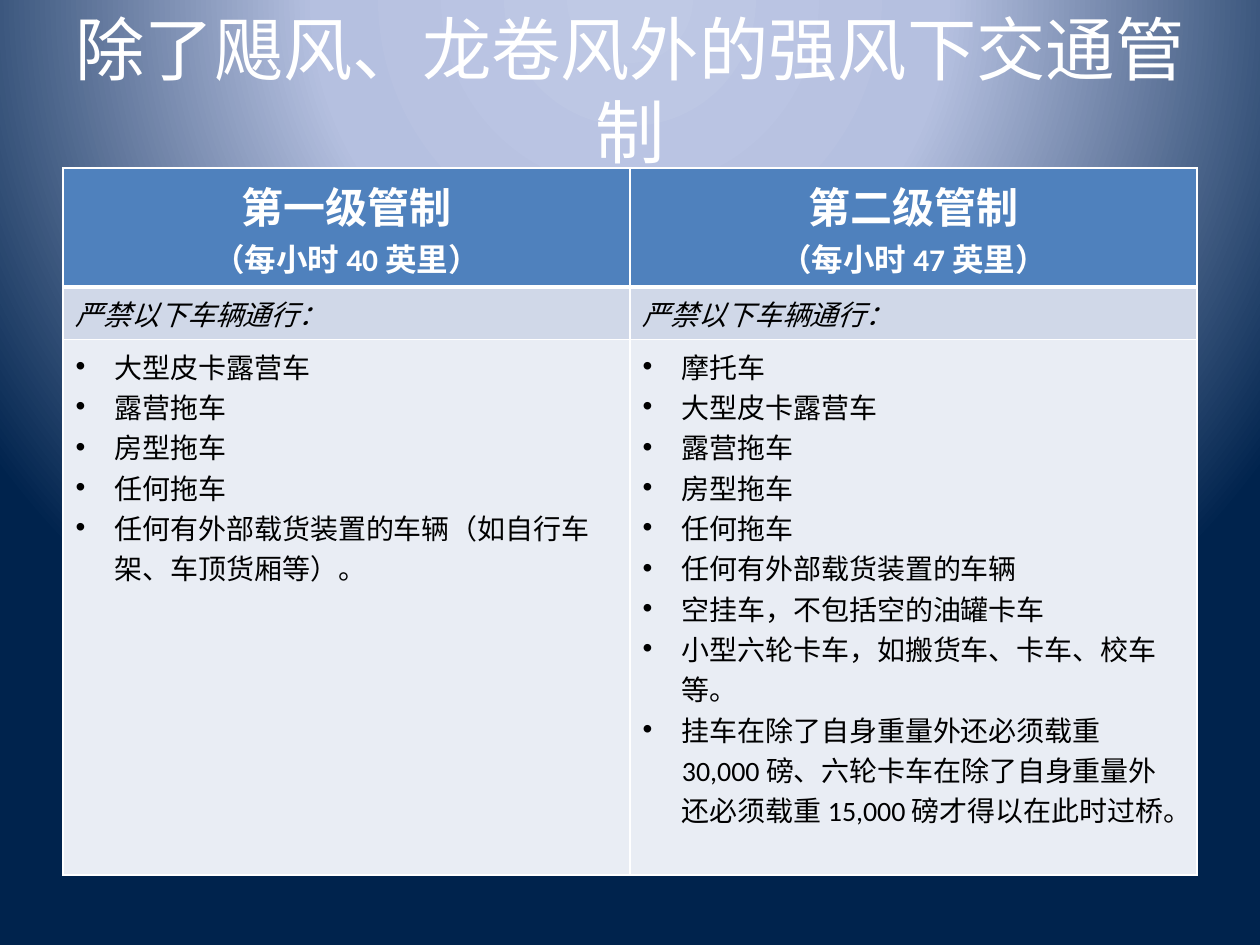
import pptx
import pptx.util
import pptx.dml.color
import pptx.enum.text
import pptx.oxml
import pptx.oxml.ns

Pt = pptx.util.Pt
ALIGN = pptx.enum.text.PP_ALIGN
NS = pptx.oxml.ns.nsdecls("a")
WHITE, BLACK = "FFFFFF", "000000"

TITLE = "除了飓风、龙卷风外的强风下交通管制"
HEADERS = [
    ("第一级管制", "（每小时 40 英里）"),
    ("第二级管制", "（每小时 47 英里）"),
]
BAN = "严禁以下车辆通行："
VEHICLES = [
    ["大型皮卡露营车", "露营拖车", "房型拖车", "任何拖车",
     "任何有外部载货装置的车辆（如自行车架、车顶货厢等）。"],
    ["摩托车", "大型皮卡露营车", "露营拖车", "房型拖车", "任何拖车",
     "任何有外部载货装置的车辆", "空挂车，不包括空的油罐卡车",
     "小型六轮卡车，如搬货车、卡车、校车等。",
     "挂车在除了自身重量外还必须载重 30,000 磅、"
     "六轮卡车在除了自身重量外还必须载重 15,000 磅才得以在此时过桥。"],
]


def rgb(color):
    return pptx.dml.color.RGBColor.from_string(color)


def set_background(s, stops):
    s.background.fill.solid()
    bg = s.background._cSld.bg.bgPr
    old = bg[0]
    gs = "".join(f'<a:gs pos="{pos * 1000}"><a:srgbClr val="{color}"/></a:gs>'
                 for pos, color in stops)
    bg.replace(old, pptx.oxml.parse_xml(
        f'<a:gradFill {NS} rotWithShape="1"><a:gsLst>{gs}</a:gsLst>'
        '<a:path path="circle"><a:fillToRect l="50000" t="-80000" '
        'r="50000" b="180000"/></a:path></a:gradFill>'))


def add_bullet(p):
    pPr = p._p.get_or_add_pPr()
    indent = int(Pt(22.5))
    pPr.set("marL", str(indent))
    pPr.set("indent", str(-indent))
    for xml in (f'<a:buFont {NS} typeface="Arial"/>',
                f'<a:buChar {NS} char="•"/>'):
        pPr.append(pptx.oxml.parse_xml(xml))


def write_text(tf, texts, sizes, color, align=None, bullet=False, **fmt):
    for i, (text, size) in enumerate(zip(texts, sizes)):
        p = tf.paragraphs[0] if i == 0 else tf.add_paragraph()
        p.alignment = align
        if bullet:
            add_bullet(p)
        r = p.add_run()
        r.text = text
        for name, value in {"name": "Calibri", "size": Pt(size), **fmt}.items():
            setattr(r.font, name, value)
        r.font.color.rgb = rgb(color)


def style_cell(cell, fill, bottom=1, top=1):
    cell.fill.solid()
    cell.fill.fore_color.rgb = rgb(fill)
    tcPr = cell._tc.get_or_add_tcPr()
    widths = {"L": 1, "R": 1, "T": top, "B": bottom}
    for i, (side, width) in enumerate(widths.items()):
        tcPr.insert(i, pptx.oxml.parse_xml(
            f'<a:ln{side} {NS} w="{int(Pt(width))}"><a:solidFill>'
            f'<a:srgbClr val="{WHITE}"/></a:solidFill></a:ln{side}>'))


def add_title(s):
    sp = s.shapes.add_textbox(Pt(36), Pt(0), Pt(648), Pt(90))
    tf = sp.text_frame
    frame = {"word_wrap": True, "margin_top": Pt(3.6),
             "vertical_anchor": pptx.enum.text.MSO_ANCHOR.TOP}
    for name, value in frame.items():
        setattr(tf, name, value)
    write_text(tf, [TITLE], [39.6], WHITE, ALIGN.CENTER)


def add_rules_table(s):
    heights = [68, 30, 306]
    table = s.shapes.add_table(3, 2, Pt(36), Pt(96), Pt(648),
                               Pt(sum(heights))).table
    for row, height in zip(table.rows, heights):
        row.height = Pt(height)
    for col, (header, vehicles) in enumerate(zip(HEADERS, VEHICLES)):
        head, ban, body = (table.cell(row, col) for row in range(3))
        style_cell(head, "4F81BD", bottom=3)
        style_cell(ban, "D0D8E8", top=3)
        style_cell(body, "E9EDF4")
        write_text(head.text_frame, header, [24, 18], WHITE, ALIGN.CENTER,
                   bold=True)
        write_text(ban.text_frame, [BAN], [16], BLACK, italic=True, bold=False)
        write_text(body.text_frame, vehicles, [16] * len(vehicles), BLACK,
                   bullet=True, bold=False)


def main():
    prs = pptx.Presentation()
    prs.slide_width, prs.slide_height = Pt(720), Pt(540)
    s = prs.slides.add_slide(prs.slide_layouts[6])
    set_background(s, [(0, "BFC9E5"), (40, "B5C0E0"), (100, "00234D")])
    add_title(s)
    add_rules_table(s)
    prs.save("out.pptx")


if __name__ == "__main__":
    main()
